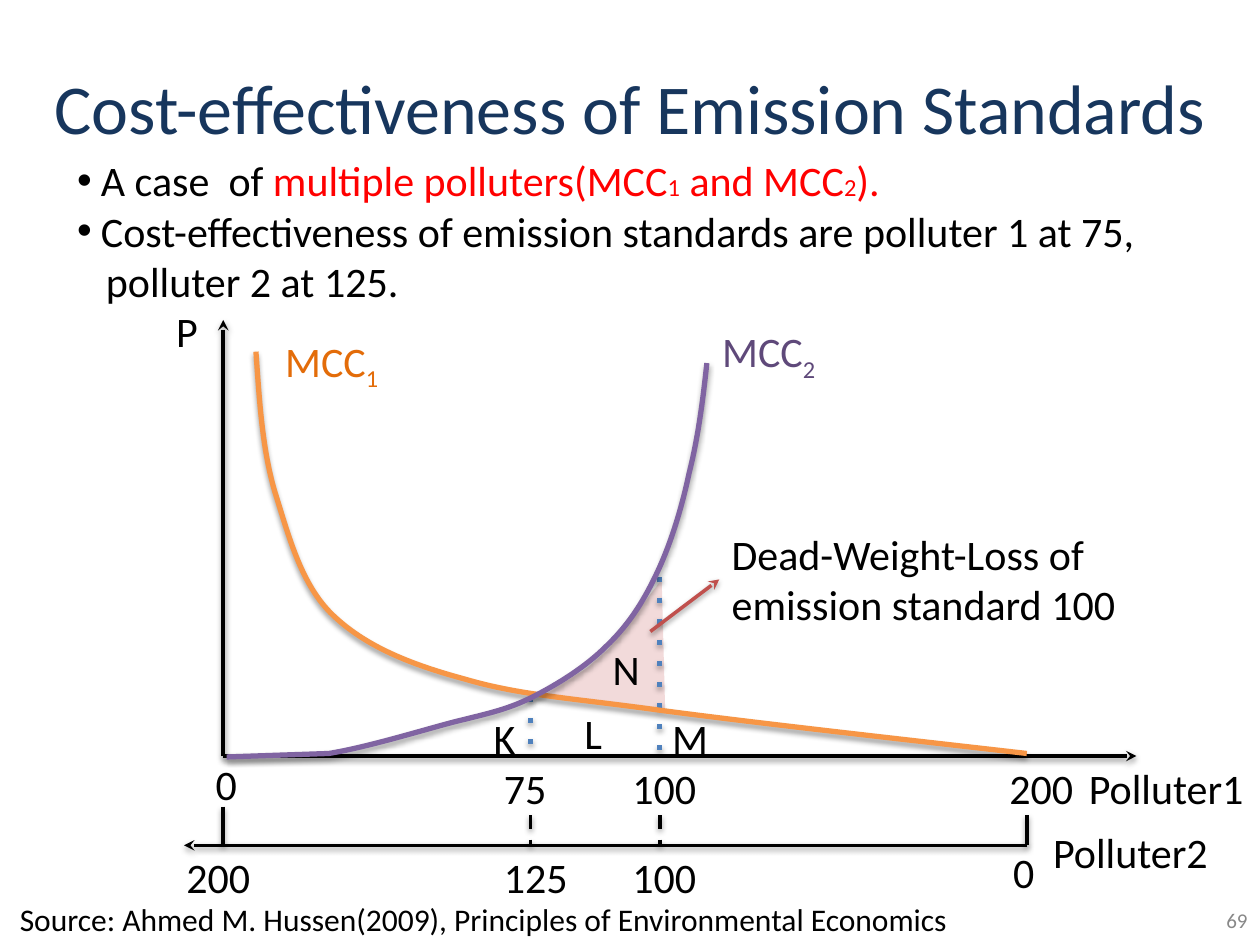
import pptx
import pptx.util
import pptx.dml.color
import pptx.enum.dml
import pptx.enum.text
import pptx.enum.shapes
import pptx.oxml
import pptx.oxml.ns
from dataclasses import dataclass
from lxml import etree

Cm = pptx.util.Cm
Pt = pptx.util.Pt
Align = pptx.enum.text.PP_ALIGN
Anchor = pptx.enum.text.MSO_ANCHOR
qn = pptx.oxml.ns.qn


@dataclass(frozen=True)
class Theme:
    face: str = "Calibri"
    head: int = 40
    text: int = 24
    small: int = 14
    source: int = 18
    page: int = 12
    ink: str = "000000"
    navy: str = "17365D"
    red: str = "FF0000"
    grey: str = "888888"
    one: str = "F79646"
    two: str = "8064A2"
    name_one: str = "E36C09"
    name_two: str = "5F497A"
    blue: str = "4F81BD"
    arrow: str = "C0504D"
    loss: str = "F2DADA"


T = Theme()
LEFT, RIGHT, BASE, LOW = 4.5, 20.7, 15.24, 17.04
K_X, M_X = 10.69, 13.3

SHADE = (
    '<a:effectLst xmlns:a="http://schemas.openxmlformats.org/drawingml/2006/main">'
    '<a:outerShdw blurRad="40000" dist="20000" dir="5400000" rotWithShape="0">'
    '<a:srgbClr val="000000"><a:alpha val="38000"/></a:srgbClr>'
    '</a:outerShdw></a:effectLst>'
)

CURVE_ONE = [
    (5.16, 7.09),
    (5.23, 8.05), (5.28, 9.02), (5.54, 9.91),
    (5.82, 10.8), (6.07, 11.79), (6.71, 12.4),
    (7.37, 13.03), (8.26, 13.39), (9.37, 13.69),
    (10.49, 14.02), (11.51, 14.07), (13.39, 14.33),
    (15.29, 14.58), (17.98, 14.88), (RIGHT, 15.19),
]
CURVE_TWO = [
    (4.57, 15.26), (6.63, 15.19),
    (7.42, 15.06), (8.48, 14.73), (9.17, 14.55),
    (9.86, 14.38), (10.24, 14.3), (10.74, 14.05),
    (11.25, 13.79), (11.81, 13.44), (12.22, 13.03),
    (12.65, 12.62), (12.95, 12.17), (13.23, 11.58),
    (13.51, 11), (13.74, 10.26), (13.89, 9.55),
    (14.07, 8.84), (14.17, 8.08), (14.25, 7.32),
]
LOSS = [
    (13.34, 11.68), (13.41, 14.33), (10.9, 14.05), (11.4, 13.74),
    (11.84, 13.46), (12.27, 13.08), (12.67, 12.57),
]
LABELS = [
    ("P", 3.3, 6.04), ("0", 4.1, 15.16), ("75", 9.91, BASE),
    ("100", 12.5, BASE), ("200", 20.1, BASE), ("K", 9.7, 14.24),
    ("L", 11.53, 14.14), ("N", 12.1, 12.85), ("M", M_X, 14.24),
    ("200", 3.51, LOW), ("125", 9.91, LOW), ("100", 12.5, LOW),
]


def rgb(code):
    return pptx.dml.color.RGBColor.from_string(code)


def style(font, size, color):
    font.name = T.face
    font.size = Pt(size)
    font.color.rgb = rgb(color)


def place(shape, left, top, width, height):
    shape.left, shape.top = Cm(left), Cm(top)
    shape.width, shape.height = Cm(width), Cm(height)


def label(slide, words, left, top, width=1.8, height=1.28, size=T.text, color=T.ink):
    box = slide.shapes.add_textbox(Cm(left), Cm(top), Cm(width), Cm(height))
    box.text_frame.word_wrap = True
    para = box.text_frame.paragraphs[0]
    para.text = words
    style(para.font, size, color)
    return box


def curve_name(slide, sub, left, top, color):
    box = label(slide, "MCC", left, top, 4.6, color=color)
    run = box.text_frame.paragraphs[0].add_run()
    run.text = sub
    run.font._element.set("baseline", "-25000")


def shade(shape):
    props = shape._element.spPr
    for old in props.findall(qn("a:effectLst")):
        props.remove(old)
    props.append(pptx.oxml.parse_xml(SHADE))


def rule(slide, start, end, color=T.ink, width=2, dash=None, arrow=False):
    line = slide.shapes.add_connector(
        pptx.enum.shapes.MSO_CONNECTOR.STRAIGHT, *map(Cm, start + end))
    line.line.color.rgb = rgb(color)
    line.line.width = Pt(width)
    props = line.line._get_or_add_ln()
    if dash:
        etree.SubElement(props, qn("a:prstDash"), val=dash)
    if arrow:
        etree.SubElement(props, qn("a:tailEnd"), type="stealth")
    shade(line)


def outline(slide, points, close):
    spots = [(Cm(x), Cm(y)) for x, y in points]
    pen = slide.shapes.build_freeform(*spots[0])
    pen.add_line_segments(spots[1:], close=close)
    shape = pen.convert_to_shape()
    shape.shadow.inherit = False
    return shape


def area(slide, points, color):
    shape = outline(slide, points, True)
    shape.fill.solid()
    shape.fill.fore_color.rgb = rgb(color)
    shape.line.fill.background()


def bend(shape, skip):
    legs = list(shape._element.iter(qn("a:lnTo")))[skip:]
    for i in range(0, len(legs), 3):
        arc = etree.Element(qn("a:cubicBezTo"))
        legs[i].addprevious(arc)
        for leg in legs[i:i + 3]:
            arc.append(leg[0])
            leg.getparent().remove(leg)


def curve(slide, knots, color, skip=0):
    shape = outline(slide, knots, False)
    bend(shape, skip)
    shape.fill.background()
    shape.line.color.rgb = rgb(color)
    shape.line.width = Pt(3)
    shade(shape)


def title(slide, words):
    shape = slide.shapes.title
    place(shape, 0, 0.55, 25.4, 3.18)
    frame = shape.text_frame
    frame.auto_size = pptx.enum.text.MSO_AUTO_SIZE.NONE
    frame.vertical_anchor = Anchor.MIDDLE
    para = frame.paragraphs[0]
    para.text = words
    para.alignment = Align.CENTER
    style(para.font, T.head, T.navy)


def points(slide, items):
    shape = slide.placeholders[1]
    place(shape, 1.3, 2.99, 22.81, 3.33)
    frame = shape.text_frame
    frame.auto_size = pptx.enum.text.MSO_AUTO_SIZE.NONE
    for i, (bullet, runs) in enumerate(items):
        para = frame.add_paragraph() if i else frame.paragraphs[0]
        props = para._p.get_or_add_pPr()
        props.set("marL", str(Cm(0.48 if bullet else 0.58)))
        props.set("indent", str(Cm(-0.48 if bullet else 0)))
        if bullet:
            tint = etree.SubElement(props, qn("a:buClr"))
            etree.SubElement(tint, qn("a:srgbClr"), val=T.ink)
            etree.SubElement(props, qn("a:buChar"), char="•")
        else:
            etree.SubElement(props, qn("a:buNone"))
        para.space_before = Pt(0)
        style(para.font, T.text, T.ink)
        for words, size, color in runs:
            run = para.add_run()
            run.text = words
            if (size, color) != (T.text, T.ink):
                style(run.font, size, color)


def graph(slide):
    rule(slide, (LEFT, BASE), (22.91, BASE), arrow=True)
    rule(slide, (LEFT, BASE), (LEFT, 6.45), arrow=True)
    for x, top in ((K_X, 14.05), (M_X, 11.63)):
        rule(slide, (x, top), (x, BASE), T.blue, 3, "dot")
        rule(slide, (x, 16.43), (x, LOW), dash="dash")
    curve(slide, CURVE_ONE, T.one)
    curve(slide, CURVE_TWO, T.two, skip=1)
    rule(slide, (RIGHT, LOW), (3.71, LOW), arrow=True)
    rule(slide, (RIGHT, 16.43), (RIGHT, LOW))
    rule(slide, (LEFT, 16.26), (LEFT, LOW))
    rule(slide, (13.11, 12.73), (14.5, 11.68), T.arrow, arrow=True)


def main():
    deck = pptx.Presentation()
    deck.slide_width, deck.slide_height = Cm(25.4), Cm(19.05)
    slide = deck.slides.add_slide(deck.slide_layouts[1])
    area(slide, LOSS, T.loss)
    title(slide, "Cost-effectiveness of Emission Standards")
    points(slide, [
        (True, [("A case  of ", T.text, T.ink),
                ("multiple polluters(MCC", T.text, T.red), ("1", T.small, T.red),
                (" and MCC", T.text, T.red), ("2", T.small, T.red),
                (").", T.text, T.red)]),
        (True, [("Cost-effectiveness of emission standards are polluter 1 at 75,",
                 T.text, T.ink)]),
        (False, [("polluter 2 at 125.", T.text, T.ink)]),
    ])
    graph(slide)
    for words, left, top in LABELS:
        label(slide, words, left, top)
    label(slide, "0", 19.91, LOW, 1.19, 1.3).rotation = 180
    label(slide, "Polluter1", 21.7, BASE, 3.7)
    label(slide, "Polluter2", 20.98, 16.54, 4.42)
    label(slide, "Dead-Weight-Loss of emission standard 100", 14.5, 10.52, 8.41, 2.31)
    curve_name(slide, "1", 5.5, 6.63, T.name_one)
    curve_name(slide, "2", 14.31, 6.44, T.name_two)
    page = label(slide, "69", 19.48, 18.03, 5.92, 1.02, T.page, T.grey)
    page.text_frame.vertical_anchor = Anchor.MIDDLE
    page.text_frame.paragraphs[0].alignment = Align.RIGHT
    label(slide, "Source: Ahmed M. Hussen(2009), Principles of Environmental Economics",
          0.15, 18.02, 19.91, 1.02, T.source)
    deck.save("out.pptx")


if __name__ == "__main__":
    main()
